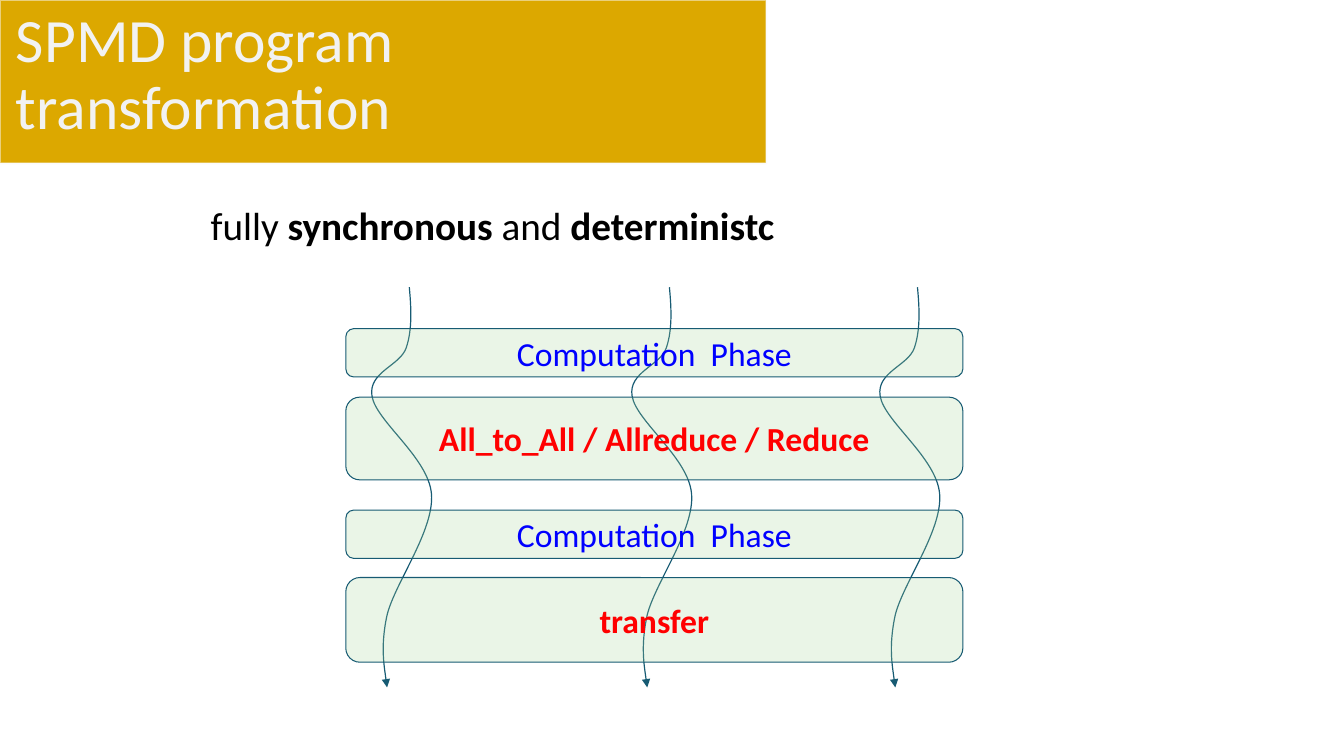
from lxml.etree import SubElement
from pptx import Presentation
from pptx.dml.color import RGBColor
from pptx.enum.shapes import MSO_SHAPE
from pptx.enum.text import MSO_ANCHOR, PP_ALIGN
from pptx.oxml.ns import qn
from pptx.util import Inches, Pt

GOLD = RGBColor(0xDC, 0xA8, 0x00)
PALE = RGBColor(0xF9, 0xF9, 0xF9)
TITLE_GRAY = RGBColor(0xF2, 0xF2, 0xF2)
BLACK = RGBColor(0, 0, 0)
TEAL = RGBColor(0x17, 0x5B, 0x73)
GREEN = RGBColor(0xA9, 0xD8, 0x9D)
BLUE = RGBColor(0, 0, 0xFF)
RED = RGBColor(0xFF, 0, 0)

# Start point, then three points for each Bézier segment
THREAD_POINTS = [
    (4.06, 2.85),
    (4.08, 3.06), (4.09, 3.27), (4.03, 3.45),
    (3.97, 3.63), (3.65, 3.69), (3.69, 3.93),
    (3.73, 4.18), (4.25, 4.54), (4.28, 4.9),
    (4.31, 5.26), (3.92, 5.78), (3.84, 6.1),
    (3.77, 6.42), (3.84, 6.82), (3.84, 6.82),
]
THREAD_OFFSETS = [0, 2.58, 5.04]

# Top, height, wording, colour, bold
PHASES = [
    (3.94, 0.82, "All_to_All / Allreduce / Reduce", RED, True),
    (3.26, 0.48, "Computation  Phase", BLUE, False),
    (5.73, 0.84, "transfer", RED, True),
    (5.06, 0.48, "Computation  Phase", BLUE, False),
]


def set_alpha(fill_element, percent):
    color = fill_element.find(qn("a:srgbClr"))
    SubElement(color, qn("a:alpha"), val=str(percent * 1000))


def set_font(para, size, color):
    para.font.name = "Calibri"
    para.font.size = Pt(size)
    para.font.color.rgb = color


def add_block(page, kind, left, top, width, height, fill, line, line_width):
    block = page.shapes.add_shape(
        kind, Inches(left), Inches(top), Inches(width), Inches(height))
    block.shadow.inherit = False
    block.fill.solid()
    block.fill.fore_color.rgb = fill
    block.line.color.rgb = line
    block.line.width = Pt(line_width)
    return block


def add_text(page, left, top, width, height, spans, size, color, anchor):
    box = page.shapes.add_textbox(
        Inches(left), Inches(top), Inches(width), Inches(height))
    frame = box.text_frame
    frame.word_wrap = True
    frame.vertical_anchor = anchor
    para = frame.paragraphs[0]
    para.line_spacing = 0.9
    set_font(para, size, color)
    for wording, bold in spans:
        span = para.add_run()
        span.text = wording
        span.font.bold = bold
    return para


def add_thread(page, offset):
    points = [(Inches(x + offset), Inches(y)) for x, y in THREAD_POINTS]
    builder = page.shapes.build_freeform(*points[0])
    builder.add_line_segments(points[1:], close=False)
    thread = builder.convert_to_shape()
    thread.shadow.inherit = False
    thread.fill.background()
    thread.line.color.rgb = TEAL
    thread.line.width = Pt(0.85)

    # Turn every three straight segments into one curve
    outline = thread.element.spPr.find(".//" + qn("a:path"))
    segments = outline.findall(qn("a:lnTo"))
    for first in range(0, len(segments), 3):
        curve = SubElement(outline, qn("a:cubicBezTo"))
        for segment in segments[first:first + 3]:
            curve.append(segment[0])
            outline.remove(segment)

    line = thread.element.spPr.find(qn("a:ln"))
    SubElement(line, qn("a:tailEnd"), type="triangle")


def add_phase(page, top, height, wording, color, bold):
    block = add_block(page, MSO_SHAPE.ROUNDED_RECTANGLE,
                      3.43, top, 6.12, height, GREEN, TEAL, 0.75)
    set_alpha(block.element.spPr.find(qn("a:solidFill")), 24)
    block.text_frame.vertical_anchor = MSO_ANCHOR.MIDDLE
    para = block.text_frame.paragraphs[0]
    para.text = wording
    para.alignment = PP_ALIGN.CENTER
    set_font(para, 24, color)
    para.font.bold = bold


def main():
    deck = Presentation()
    deck.slide_width = Inches(13.33)
    deck.slide_height = Inches(7.5)
    page = deck.slides.add_slide(deck.slide_layouts[6])

    # Title banner
    banner = add_block(page, MSO_SHAPE.FLOWCHART_PROCESS,
                       0, 0, 7.6, 1.62, GOLD, PALE, 1.35)
    set_alpha(banner.element.spPr.find(qn("a:ln")).find(qn("a:solidFill")), 50)
    add_text(page, 0.06, 0.03, 7.51, 1.45,
             [("SPMD program transformation", False)],
             44, TITLE_GRAY, MSO_ANCHOR.MIDDLE)

    # Statement
    statement = add_text(page, 1.99, 2, 10.43, 0.6,
                         [("fully ", False), ("synchronous ", True),
                          ("and ", False), ("deterministc", True)],
                         28, BLACK, MSO_ANCHOR.TOP)
    statement.space_before = Pt(10)

    # Threads running down through the phases
    for offset in THREAD_OFFSETS:
        add_thread(page, offset)
    for phase in PHASES:
        add_phase(page, *phase)

    deck.save("out.pptx")


if __name__ == "__main__":
    main()
